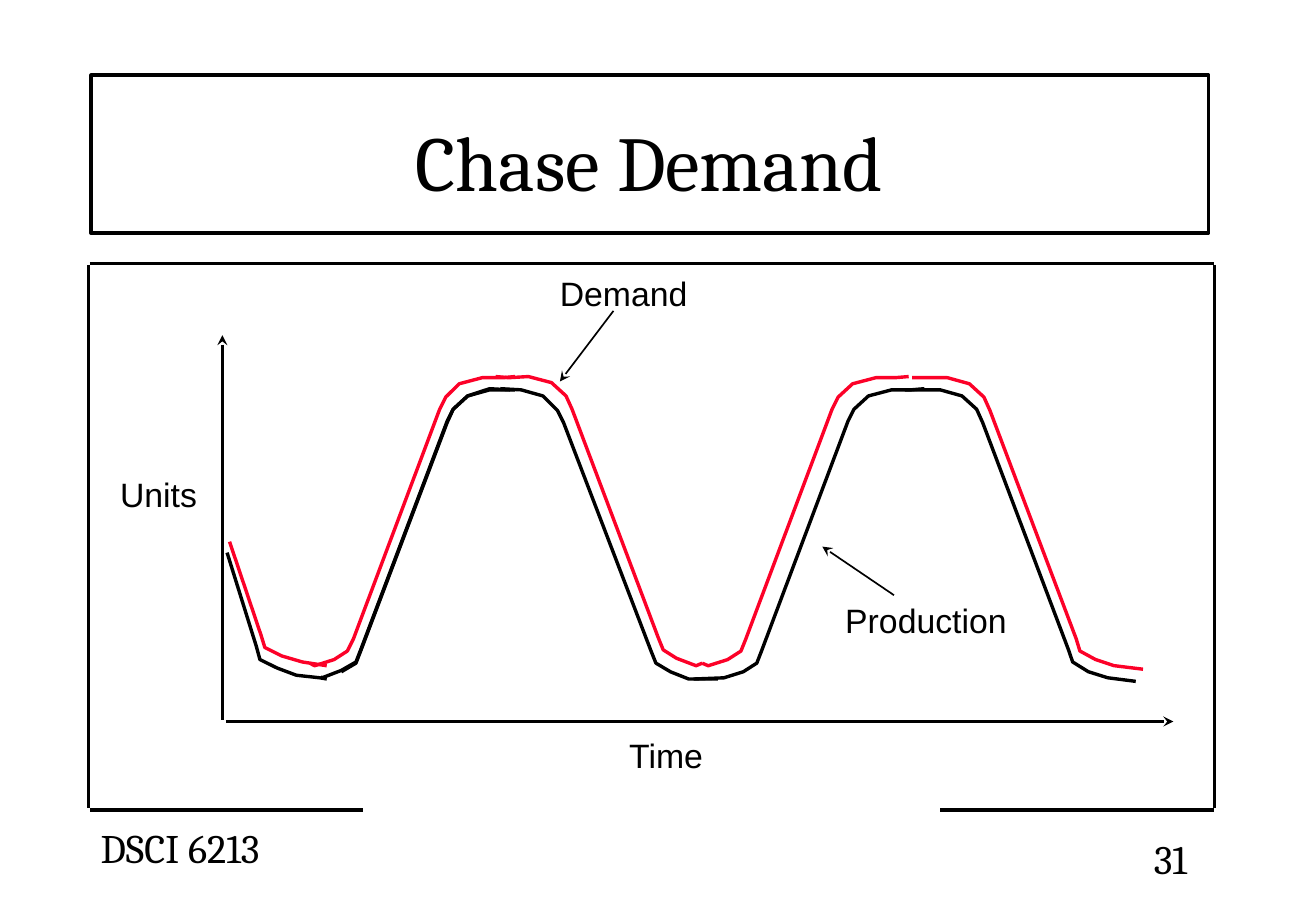
import pptx
import pptx.dml.color
import pptx.enum.shapes
import pptx.enum.text
import pptx.oxml
import pptx.util

BLACK = pptx.dml.color.RGBColor(0x00, 0x00, 0x00)
RED = pptx.dml.color.RGBColor(0xFC, 0x01, 0x28)
Pt = pptx.util.Pt

deck = pptx.Presentation()
deck.slide_width, deck.slide_height = Pt(780), Pt(540)
page = deck.slides.add_slide(deck.slide_layouts[5])
shapes = page.shapes


def write_text(box, text, font="Arial", size=20, wrap=True, align=None,
               anchor=pptx.enum.text.MSO_ANCHOR.TOP,
               fit=pptx.enum.text.MSO_AUTO_SIZE.SHAPE_TO_FIT_TEXT):
    frame = box.text_frame
    frame.word_wrap = wrap
    frame.auto_size = fit
    frame.vertical_anchor = anchor
    para = frame.paragraphs[0]
    para.alignment = align
    span = para.add_run()
    span.text = text
    span.font.name = font
    span.font.size = Pt(size)
    span.font.color.rgb = BLACK


def draw_line(start, end, width=2, arrow=None):
    """Draw a black line; arrow is None, "headEnd" (at start) or "tailEnd" (at end)."""
    line = shapes.add_connector(pptx.enum.shapes.MSO_CONNECTOR.STRAIGHT,
                                Pt(start[0]), Pt(start[1]), Pt(end[0]), Pt(end[1]))
    line.line.color.rgb = BLACK
    line.line.width = Pt(width)
    if arrow:
        tip = pptx.oxml.parse_xml(
            '<a:%s xmlns:a="http://schemas.openxmlformats.org/drawingml/2006/main"'
            ' type="stealth"/>' % arrow)
        line.line._get_or_add_ln().append(tip)
    effects = pptx.oxml.parse_xml(
        '<a:effectLst xmlns:a="http://schemas.openxmlformats.org/drawingml/2006/main"/>')
    line._element.spPr.append(effects)


# Title and its border
title = shapes.title
title.left, title.top, title.width, title.height = Pt(59.8), Pt(48.2), Pt(650), Pt(93.6)
write_text(title, "Chase Demand", font="Cambria", size=46,
           align=pptx.enum.text.PP_ALIGN.CENTER,
           anchor=pptx.enum.text.MSO_ANCHOR.MIDDLE,
           fit=pptx.enum.text.MSO_AUTO_SIZE.NONE)
border = shapes.add_shape(pptx.enum.shapes.MSO_SHAPE.RECTANGLE,
                          Pt(54), Pt(44.6), Pt(662.4), Pt(93.6))
border.shadow.inherit = False
border.fill.background()
border.line.color.rgb = BLACK
border.line.width = Pt(2)

# Frame, open at the middle of its lower side
for start, end in [
    ((53.3, 156.2), (719.3, 156.2)),
    ((52.6, 157), (52.6, 478.8)),
    ((720, 157), (720, 478.8)),
    ((53.3, 480.2), (215.3, 480.2)),
    ((557.3, 480.2), (719.3, 480.2)),
]:
    draw_line(start, end)

# Axes
draw_line((131.8, 198.7), (131.8, 427), arrow="headEnd")
draw_line((133.9, 427.7), (695.5, 427.7), arrow="tailEnd")

# Each curve is made of joined pieces
demand_pieces = [
    [(136.1, 321.1), (154.8, 376.6), (157, 383.8), (167, 388.8), (179.3, 392.4),
     (193.7, 394.6)],
    [(305.3, 223.2), (298.1, 223.9), (285.8, 223.9), (272.2, 227.5), (264.2, 235.4),
     (260.6, 242.6), (209.5, 378.7), (205.9, 385.9), (198, 391), (186.5, 394.6),
     (183.6, 393.1)],
    [(293.8, 223.2), (301.7, 223.9), (313.2, 223.2), (326.9, 226.8), (335.5, 234.7),
     (339.1, 242.6), (390.2, 378), (393.1, 385.2), (401, 390.2), (412.6, 394.6),
     (416.2, 393.1)],
    [(538.6, 223.2), (530.6, 223.9), (519.1, 223.9), (505.4, 227.5), (496.8, 235.4),
     (493.2, 242.6), (442.1, 378.7), (439.2, 385.9), (431.3, 391), (419.8, 394.6),
     (416.2, 393.1)],
    [(540.7, 223.9), (548.6, 223.9), (561.6, 223.9), (574.6, 227.5), (583.2, 235.4),
     (586.8, 243.4), (637.9, 378.7), (640.1, 385.9), (649.4, 391), (660.2, 394.6),
     (677.5, 396.7)],
]
production_pieces = [
    [(134.6, 327.6), (151.9, 383), (154.1, 391), (164.2, 396), (175.7, 400.3),
     (189.4, 401.8), (193.7, 402.5)],
    [(302.4, 231.1), (290.2, 230.4), (277.2, 234.7), (268.6, 242.6), (265, 249.8),
     (213.8, 385.2), (211, 392.4), (202.3, 397.4), (190.8, 401.8), (191.5, 401)],
    [(305.3, 231.1), (302.4, 231.1), (290.2, 231.1), (277.2, 234.7), (268.6, 242.6),
     (265, 250.6), (213.8, 385.9), (211, 393.1), (202.3, 398.2)],
    [(296.6, 230.4), (308.9, 231.1), (321.8, 234.7), (330.5, 243.4), (334.1, 250.6),
     (385.9, 385.9), (388.8, 393.1), (397.4, 398.2), (408.2, 402.5), (425.5, 402.5)],
    [(547.9, 230.4), (540, 231.1), (528.5, 231.1), (514.8, 234.7), (506.2, 242.6),
     (502.6, 249.8), (451.4, 385.9), (448.6, 393.1), (440.6, 398.2), (429.1, 401.8),
     (411.1, 402.5)],
    [(536.4, 231.1), (544.3, 231.1), (557.3, 231.1), (570.2, 234.7), (578.9, 242.6),
     (582.5, 250.6), (633.6, 385.9), (635.8, 392.4), (645.1, 398.2), (656.6, 401.8),
     (673.2, 403.9)],
]
for color, pieces in [(RED, demand_pieces), (BLACK, production_pieces)]:
    for piece in pieces:
        points = [(Pt(x), Pt(y)) for x, y in piece]
        builder = shapes.build_freeform(*points[0])
        builder.add_line_segments(points[1:], close=False)
        curve = builder.convert_to_shape()
        curve.shadow.inherit = False
        curve.fill.background()
        curve.line.color.rgb = color
        curve.line.width = Pt(2)

# Labels with their pointers
for text, left, top, width in [
    ("Time", 365.8, 432, 66.2),
    ("Units", 64.1, 277.2, 61.9),
    ("Production", 493.9, 352.1, 126.7),
    ("Demand", 324.7, 158.4, 140.4),
]:
    write_text(shapes.add_textbox(Pt(left), Pt(top), Pt(width), Pt(31)), text)
draw_line((331.9, 226.1), (363.6, 184.3), width=1, arrow="headEnd")
draw_line((487.4, 324), (529.9, 352.8), width=1, arrow="headEnd")

# Footer
for text, left, top, width in [
    ("DSCI 6213", 52.6, 484.6, 124.6),
    ("31", 676.8, 491, 42.5),
]:
    write_text(shapes.add_textbox(Pt(left), Pt(top), Pt(width), Pt(36)), text,
               font="Cambria", size=24, wrap=False)

deck.save("out.pptx")
